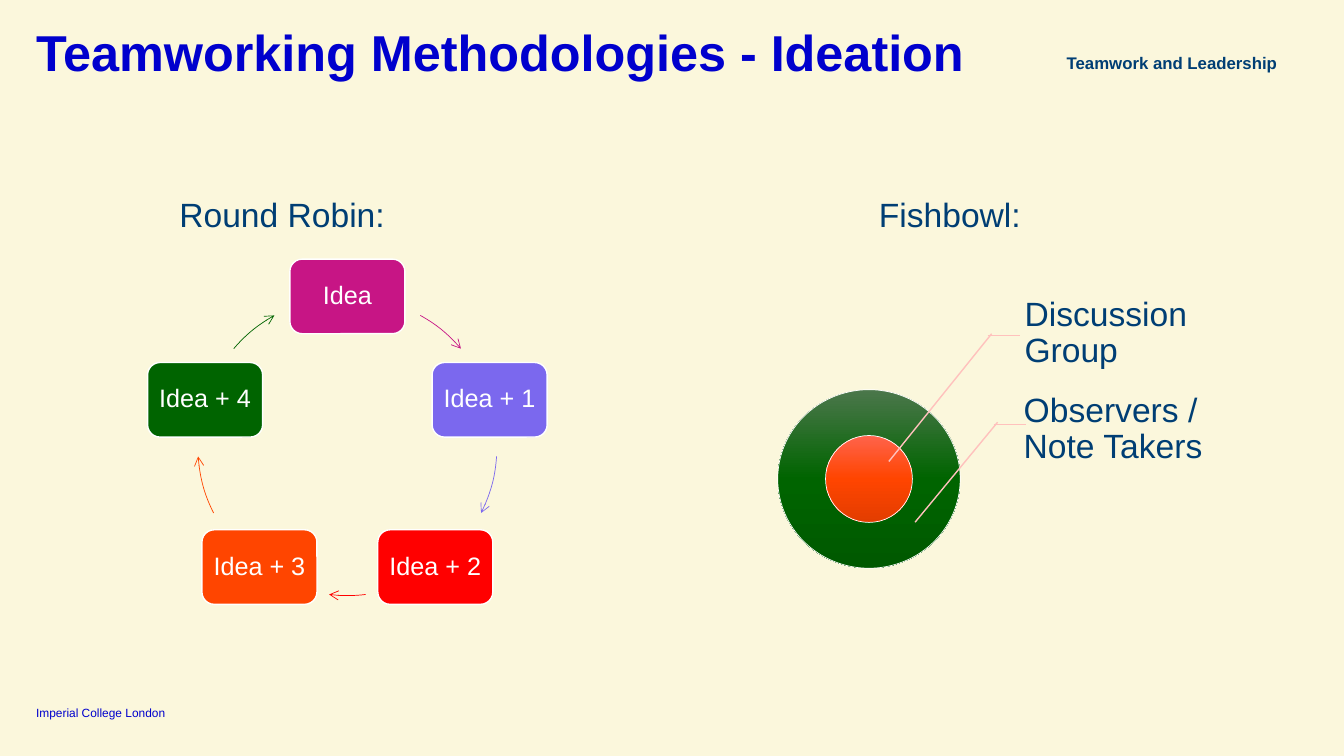
from copy import deepcopy
from math import cos, radians, sin

from lxml.etree import SubElement
from pptx import Presentation
from pptx.dml.color import RGBColor
from pptx.enum.shapes import MSO_CONNECTOR as Connector, MSO_SHAPE as Shape
from pptx.enum.text import MSO_ANCHOR as Anchor, PP_ALIGN as Align
from pptx.oxml.ns import qn
from pptx.util import Cm, Pt

CREAM = RGBColor(0xFB, 0xF7, 0xDC)
BLUE = RGBColor(0x00, 0x00, 0xCD)
NAVY = RGBColor(0x00, 0x3E, 0x74)
WHITE = RGBColor(0xFF, 0xFF, 0xFF)
PINK = RGBColor(0xFF, 0xC1, 0xBD)
MAGENTA = RGBColor(0xC7, 0x15, 0x85)
VIOLET = RGBColor(0x7B, 0x68, 0xEE)
RED = RGBColor(0xFF, 0x00, 0x00)
ORANGE = RGBColor(0xFF, 0x45, 0x00)
GREEN = RGBColor(0x00, 0x64, 0x00)
GREEN_SHADES = (RGBColor(0x4B, 0x77, 0x4B), GREEN, RGBColor(0x00, 0x59, 0x00))
ORANGE_SHADES = (RGBColor(0xFF, 0x63, 0x4B), ORANGE, RGBColor(0xE3, 0x3D, 0x00))

# Each idea with its colour and the arc (degrees clockwise from the top) leaving it
IDEAS = (
    ("Idea", MAGENTA, 29.2, 49.4),
    ("Idea + 1", VIOLET, 94, 116.6),
    ("Idea + 2", RED, 173, 187),
    ("Idea + 3", ORANGE, 243.4, 266),
    ("Idea + 4", GREEN, 310.6, 330.8),
)


def write(holder, text, size, color, bold=False, align=Align.LEFT,
          anchor=Anchor.TOP, insets=(0, 0, 0, 0), spacing=None):
    frame = holder.text_frame
    frame.text = text
    frame.word_wrap = True
    frame.vertical_anchor = anchor
    (frame.margin_left, frame.margin_top,
     frame.margin_right, frame.margin_bottom) = map(Cm, insets)
    paragraph = frame.paragraphs[0]
    paragraph.alignment = align
    if spacing:
        paragraph.line_spacing = spacing
    font = paragraph.runs[0].font
    font.name, font.size, font.bold = "Arial", Pt(size), bold
    font.color.rgb = color


def add_label(slide, left, top, width, height, text, size, color, **style):
    label = slide.shapes.add_textbox(Cm(left), Cm(top), Cm(width), Cm(height))
    write(label, text, size, color, **style)


def add_centred(slide, kind, x, y, width, height, line_color, line_width):
    shape = slide.shapes.add_shape(
        kind, Cm(x - width / 2), Cm(y - height / 2), Cm(width), Cm(height))
    shape.shadow.inherit = False
    shape.line.color.rgb = line_color
    shape.line.width = Pt(line_width)
    return shape


def add_line(slide, x1, y1, x2, y2):
    line = slide.shapes.add_connector(
        Connector.STRAIGHT, Cm(x1), Cm(y1), Cm(x2), Cm(y2))
    line.line.color.rgb = PINK
    line.line.width = Pt(1)
    SubElement(line._element.spPr, qn("a:effectLst"))


def add_heading(slide, left, top, width, text):
    add_label(slide, left, top, width, 1.27, text, 24, NAVY,
              insets=(0.25, 0.13, 0.25, 0.13))


def draw_page(slide):
    slide.background.fill.solid()
    slide.background.fill.fore_color.rgb = CREAM
    title = slide.shapes.title
    title.left, title.top, title.width, title.height = map(
        Cm, (0.91, 0.71, 32.05, 1.04))
    write(title, "Teamworking Methodologies - Ideation", 36, BLUE,
          bold=True, spacing=0.9)
    add_label(slide, 23.5, 1.3, 8.69, 0.86, "Teamwork and Leadership", 12, NAVY,
              bold=True, align=Align.RIGHT, spacing=1.05)
    add_label(slide, 0.91, 17.75, 3.94, 0.38, "Imperial College London", 8.5, BLUE,
              anchor=Anchor.BOTTOM)


def draw_round_robin(slide, left, top, width):
    add_heading(slide, left, top, width, "Round Robin:")
    center_x, center_y, radius = left + width / 2, top + 6.49, 3.77
    for index, (name, color, arc_start, arc_end) in enumerate(IDEAS):
        # Idea box, evenly spaced round the circle
        angle = radians(360 / len(IDEAS) * index)
        idea = add_centred(slide, Shape.ROUNDED_RECTANGLE,
                           center_x + radius * sin(angle),
                           center_y - radius * cos(angle), 2.9, 1.88, WHITE, 1)
        idea.fill.solid()
        idea.fill.fore_color.rgb = color
        write(idea, name, 18, WHITE, align=Align.CENTER, anchor=Anchor.MIDDLE,
              insets=(0.1, 0.1, 0.1, 0.1), spacing=0.9)

        # Arrow to the next idea; arc angles count from the right, in 0.6 units
        arrow = add_centred(slide, Shape.ARC, center_x, center_y,
                            2 * radius, 2 * radius, color, 0.5)
        arrow.fill.background()
        for side, degrees in enumerate((arc_start, arc_end)):
            arrow.adjustments[side] = (degrees - 90) % 360 * 0.6
        SubElement(arrow.line._get_or_add_ln(), qn("a:tailEnd"), type="arrow")


def draw_ring(slide, x, y, width, height, shades):
    ring = add_centred(slide, Shape.OVAL, x, y, width, height, WHITE, 0.5)
    ring.fill.gradient()
    ring.fill.gradient_angle = 270
    stops = ring._element.spPr.find(".//" + qn("a:gsLst"))
    stops.append(deepcopy(stops[0]))
    for stop, position, shade in zip(ring.fill.gradient_stops, (0, 0.5, 1), shades):
        stop.position = position
        stop.color.rgb = shade


def draw_callout(slide, label_box, shelf, target, text):
    add_label(slide, *label_box, text, 24, NAVY, anchor=Anchor.MIDDLE,
              insets=(0.48, 0.08, 0.08, 0.08), spacing=0.9)
    x, y = shelf
    add_line(slide, x, y, x + 0.82, y)
    add_line(slide, x + 0.1, y - 0.05, *target)


def draw_fishbowl(slide, left, top, width):
    add_heading(slide, left, top, width, "Fishbowl:")
    center_y = top + 7.32
    draw_ring(slide, left, center_y, 4.6, 4.5, GREEN_SHADES)
    draw_ring(slide, left, center_y, 2.19, 2.19, ORANGE_SHADES)
    draw_callout(slide, (left + 3.44, top + 2.29, 5.27, 2.74),
                 (left + 2.99, top + 3.71), (left + 0.5, top + 6.88),
                 "Discussion Group")
    draw_callout(slide, (left + 3.42, top + 4.7, 5.27, 2.74),
                 (left + 3.14, top + 5.94), (left + 1.16, top + 8.41),
                 "Observers / Note Takers")


def main():
    deck = Presentation()
    deck.slide_width, deck.slide_height = Cm(33.87), Cm(19.05)
    slide = deck.slides.add_slide(deck.slide_layouts[5])
    draw_page(slide)
    draw_round_robin(slide, 4.27, 4.75, 8.97)
    draw_fishbowl(slide, 21.9, 4.75, 8.97)
    deck.save("out.pptx")


if __name__ == "__main__":
    main()
